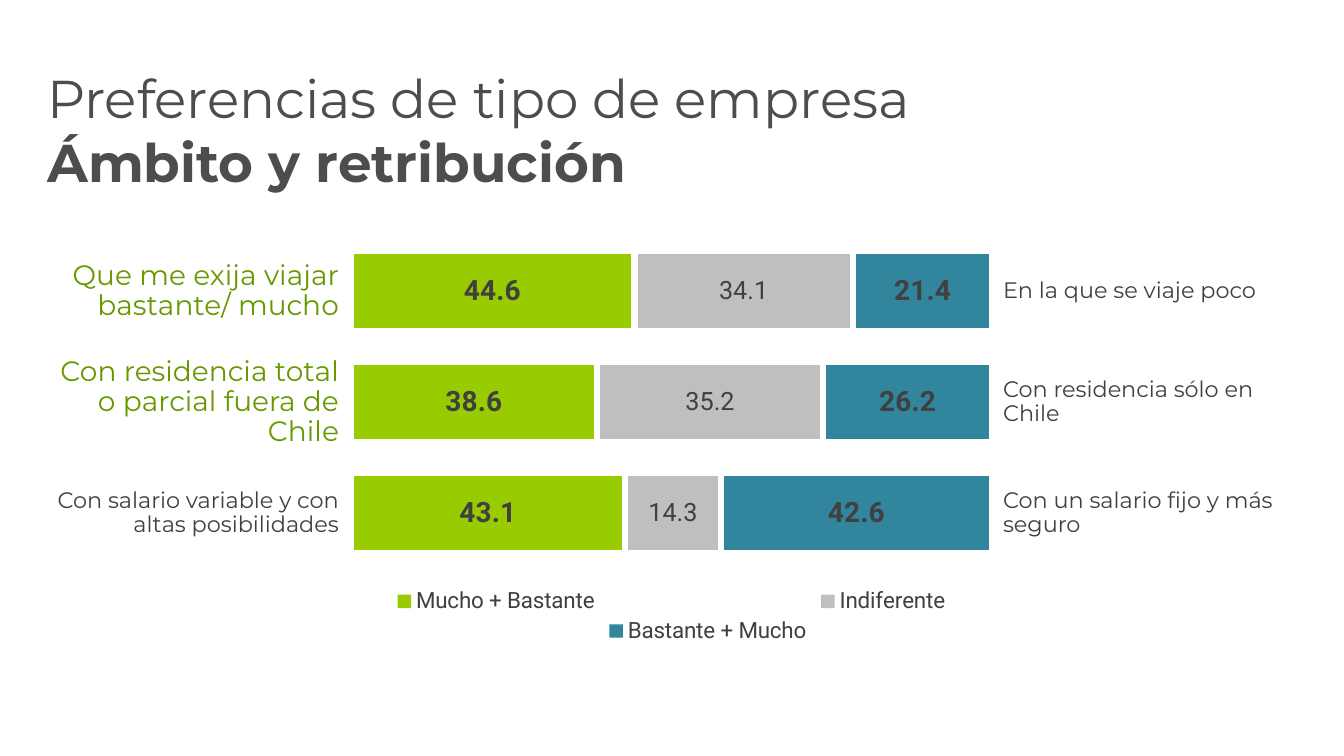
import pptx
import pptx.chart.data
import pptx.dml.color
import pptx.enum.chart
import pptx.enum.text
import pptx.util
from lxml import etree

Inches = pptx.util.Inches
Pt = pptx.util.Pt
ALIGN = pptx.enum.text.PP_ALIGN
ANCHOR = pptx.enum.text.MSO_ANCHOR

# Content
TITLE = [("Preferencias de tipo de empresa", False), ("Ámbito y retribución", True)]
GREEN, DARK = "669900", "404040"
# left statement, its size, colour and height; right statement and its height
ROWS = [
    (["Que me exija viajar", "bastante/ mucho"], 20, GREEN, 0.71,
     ["En la que se viaje poco"], 0.34),
    (["Con residencia total o parcial fuera de Chile"], 20, GREEN, 1.01,
     ["Con residencia sólo en Chile"], 0.59),
    (["Con salario variable y con altas posibilidades"], 16, DARK, 0.59,
     ["Con un salario fijo y más seguro"], 0.59),
]
# name, values, fill, label size (None for a gap between bars), bold label
GAP = (" ", [1, 1, 1], "FFFFFF", None, False)
ANSWERS = [
    ("Mucho + Bastante", [44.6, 38.6, 43.1], "99CC00", 20, True),
    GAP,
    ("Indiferente", [34.1, 35.2, 14.3], "BFBFBF", 18, False),
    GAP,
    ("Bastante + Mucho", [21.4, 26.2, 42.6], "31859C", 20, True),
]
PLOT = {"x": 0.106, "y": 0.036, "w": 0.788, "h": 0.778}
FIRST_ROW, ROW_STEP = 2.89, 1.1


def rgb(value):
    return pptx.dml.color.RGBColor.from_string(value)


def style(font, size, color=DARK, bold=False, name="Roboto"):
    font.size, font.bold, font.name = Pt(size), bold, name
    font.color.rgb = rgb(color)


def add_text(lines, left, top, width, height, *, size, color,
             align=ALIGN.LEFT, anchor=ANCHOR.MIDDLE, spacing=0.9):
    """Write (text, bold) lines as one paragraph with line breaks."""
    frame = slide.shapes.add_textbox(
        Inches(left), Inches(top), Inches(width), Inches(height)).text_frame
    frame.word_wrap = True
    frame.vertical_anchor = anchor
    paragraph = frame.paragraphs[0]
    paragraph.alignment, paragraph.line_spacing = align, spacing
    for index, (text, bold) in enumerate(lines):
        if index:
            paragraph.add_line_break()
        run = paragraph.add_run()
        run.text = text
        style(run.font, size, color, bold, "Montserrat")


presentation = pptx.Presentation()
presentation.slide_width, presentation.slide_height = Inches(13.33), Inches(7.5)
slide = presentation.slides.add_slide(presentation.slide_layouts[6])

# Title
add_text(TITLE, 0.37, 0.6, 9.52, 1.09, size=38, color="4D4D4D",
         anchor=ANCHOR.TOP, spacing=1.0)

# Opposing statements on both sides of each bar
for row, (left, size, color, left_height, right, right_height) in enumerate(ROWS):
    middle = FIRST_ROW + row * ROW_STEP
    add_text([(line, False) for line in left], 0.37, middle - left_height / 2,
             3.09, left_height, size=size, color=color, align=ALIGN.RIGHT)
    add_text([(line, False) for line in right], 9.85, middle - right_height / 2,
             3.12, right_height, size=16, color=DARK)

# Stacked bars
answers = pptx.chart.data.CategoryChartData(number_format="0.0")
answers.categories = ["1", "2", "3"]
for name, values, *_ in ANSWERS:
    answers.add_series(name, values)
chart = slide.shapes.add_chart(
    pptx.enum.chart.XL_CHART_TYPE.BAR_STACKED_100,
    Inches(2.66), Inches(2.18), Inches(8), Inches(4.25), answers).chart
style(chart.font, 16)
chart.has_title = False
chart.category_axis.reverse_order = True
chart.category_axis.visible = False
chart.value_axis.has_major_gridlines = False
chart.value_axis.visible = False

bars = chart.plots[0]
bars.gap_width, bars.overlap, bars.vary_by_categories = 50, 100, False
for series, (_, _, fill, label_size, bold) in zip(bars.series, ANSWERS):
    series.format.fill.solid()
    series.format.fill.fore_color.rgb = rgb(fill)
    series.format.line.fill.background()
    if label_size:
        labels = series.data_labels
        labels.show_value = True
        labels.number_format, labels.number_format_is_linked = "0.0", False
        labels.position = pptx.enum.chart.XL_LABEL_POSITION.CENTER
        style(labels.font, label_size, bold=bold)

# Legend
chart.has_legend = True
chart.legend.position = pptx.enum.chart.XL_LEGEND_POSITION.BOTTOM
chart.legend.include_in_layout = False
style(chart.legend.font, 16)

# Fixed plot area, so that the bars line up with the statements
C = "{http://schemas.openxmlformats.org/drawingml/2006/chart}"
plot_area = chart.element.find(f".//{C}plotArea")
layout = plot_area.find(f"{C}layout")
if layout is None:
    layout = etree.Element(f"{C}layout")
    plot_area.insert(0, layout)
manual = etree.SubElement(layout, f"{C}manualLayout")
settings = [("layoutTarget", "inner"), ("xMode", "edge"), ("yMode", "edge")]
for tag, value in settings + list(PLOT.items()):
    etree.SubElement(manual, f"{C}{tag}").set("val", str(value))

presentation.save("out.pptx")
